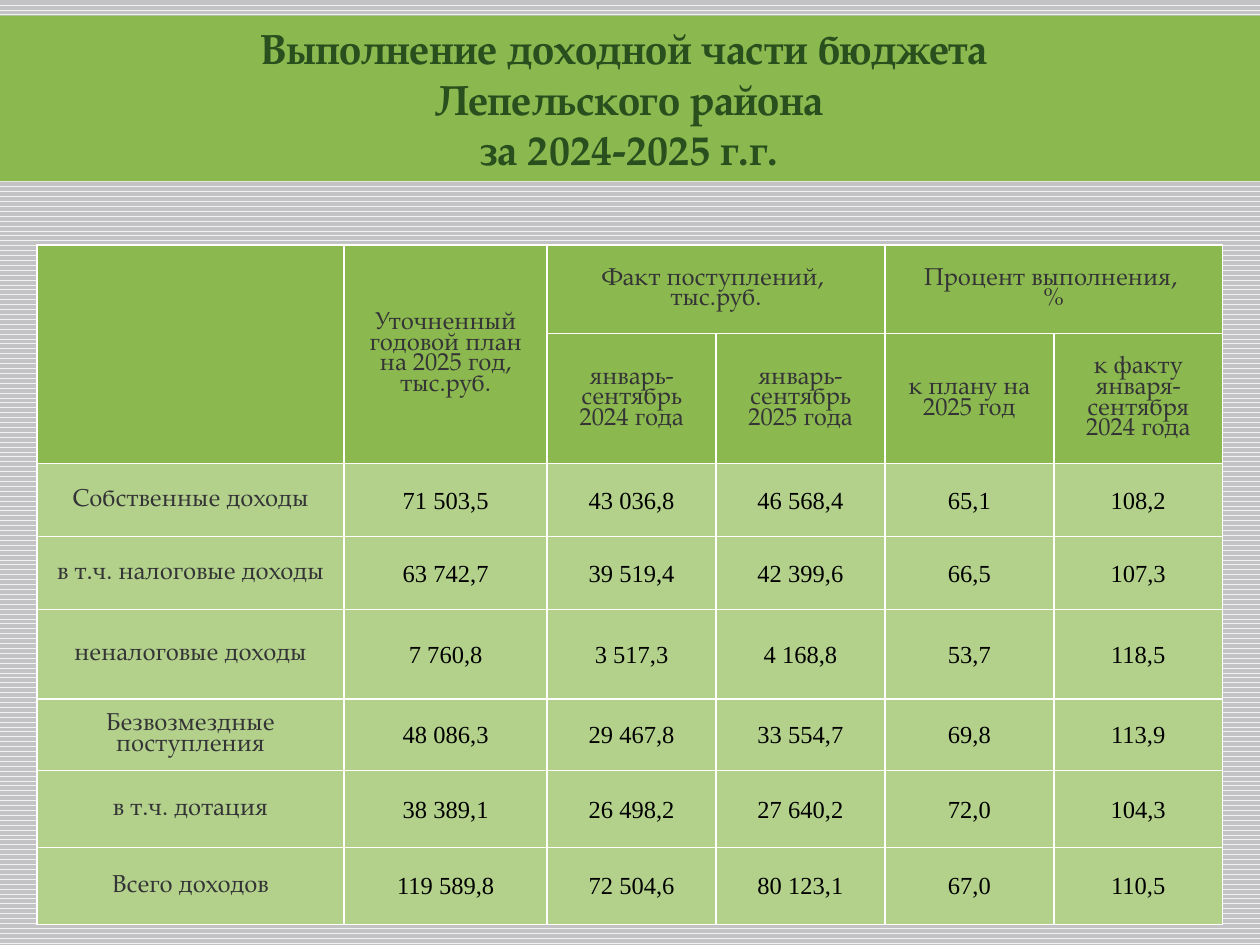
from lxml import etree
from pptx import Presentation
from pptx.dml.color import RGBColor
from pptx.enum import dml, shapes, text
from pptx.oxml import ns
from pptx.util import Pt

GREEN = RGBColor(0x8C, 0xB9, 0x4F)
PALE_GREEN = RGBColor(0xB3, 0xD1, 0x8B)
DARK_GREEN = RGBColor(0x28, 0x4F, 0x1D)
GRAPHITE = RGBColor(0x34, 0x34, 0x36)
BLACK = RGBColor(0, 0, 0)
WHITE = RGBColor(0xFF, 0xFF, 0xFF)
STRIPE = RGBColor(0xF2, 0xF2, 0xF2)
GRAY = RGBColor(0xC3, 0xC2, 0xC5)
SERIF, NUMERIC = "TeX Gyre Pagella", "Times New Roman"

TITLE = ["Выполнение доходной части бюджета ", "Лепельского района", "за 2024-2025 г.г."]
# (row, column, rows spanned, columns spanned, lines)
HEADERS = [
    (0, 0, 2, 1, []),
    (0, 1, 2, 1, ["Уточненный годовой план на 2025 год, тыс.руб."]),
    (0, 2, 1, 2, ["Факт поступлений, ", "тыс.руб."]),
    (0, 4, 1, 2, ["Процент выполнения, ", "%"]),
    (1, 2, 1, 1, ["январь-сентябрь 2024 года"]),
    (1, 3, 1, 1, ["январь-сентябрь 2025 года"]),
    (1, 4, 1, 1, ["к плану на 2025 год"]),
    (1, 5, 1, 1, ["к факту января-сентября 2024 года"]),
]
INCOME = [
    ("Собственные доходы", "71 503,5", "43 036,8", "46 568,4", "65,1", "108,2"),
    ("в т.ч. налоговые доходы", "63 742,7", "39 519,4", "42 399,6", "66,5", "107,3"),
    ("неналоговые доходы", "7 760,8", "3 517,3", "4 168,8", "53,7", "118,5"),
    ("Безвозмездные поступления", "48 086,3", "29 467,8", "33 554,7", "69,8", "113,9"),
    ("в т.ч. дотация", "38 389,1", "26 498,2", "27 640,2", "72,0", "104,3"),
    ("Всего доходов", "119 589,8", "72 504,6", "80 123,1", "67,0", "110,5"),
]
COLUMN_WIDTHS = [175.7, 116] + [96.5] * 4
ROW_HEIGHTS = [50.5, 74.5, 41.7, 41.7, 51, 41, 44, 44]
HEADER_ROWS = 2


def write(frame, lines, size=14, font=SERIF, color=GRAPHITE, bold=False, spacing=None):
    for i, line in enumerate(lines):
        paragraph = frame.paragraphs[0] if i == 0 else frame.add_paragraph()
        paragraph.alignment = text.PP_ALIGN.CENTER
        paragraph.line_spacing = spacing
        run = paragraph.add_run()
        run.text = line
        run.font.size, run.font.name, run.font.bold = Pt(size), font, bold
        run.font.color.rgb = color


def style_cell(cell, color):
    """Fill a cell, centre it vertically and give it white borders."""
    cell.fill.solid()
    cell.fill.fore_color.rgb = color
    cell.vertical_anchor = text.MSO_ANCHOR.MIDDLE
    properties = cell._tc.get_or_add_tcPr()
    for i, side in enumerate(("a:lnL", "a:lnR", "a:lnT", "a:lnB")):
        border = etree.Element(ns.qn(side), w=str(Pt(1)))
        fill = etree.SubElement(border, ns.qn("a:solidFill"))
        etree.SubElement(fill, ns.qn("a:srgbClr"), val=str(WHITE))
        properties.insert(i, border)


def add_title(slide):
    banner = slide.shapes.add_shape(
        shapes.MSO_SHAPE.RECTANGLE, Pt(-0.5), Pt(9), Pt(720.5), Pt(94.5))
    banner.shadow.inherit = False
    banner.fill.solid()
    banner.fill.fore_color.rgb = GREEN
    banner.line.fill.background()
    banner.text_frame.word_wrap = True
    banner.text_frame.auto_size = text.MSO_AUTO_SIZE.SHAPE_TO_FIT_TEXT
    write(banner.text_frame, TITLE, size=24, color=DARK_GREEN, bold=True)


def add_income_table(slide):
    table = slide.shapes.add_table(
        len(ROW_HEIGHTS), len(COLUMN_WIDTHS), Pt(21), Pt(140),
        Pt(sum(COLUMN_WIDTHS)), Pt(sum(ROW_HEIGHTS))).table
    for column, width in zip(table.columns, COLUMN_WIDTHS):
        column.width = Pt(width)
    for r, height in enumerate(ROW_HEIGHTS):
        table.rows[r].height = Pt(height)
        for c in range(len(COLUMN_WIDTHS)):
            style_cell(table.cell(r, c), GREEN if r < HEADER_ROWS else PALE_GREEN)

    for row, column, rows, columns, lines in HEADERS:
        cell = table.cell(row, column)
        if rows * columns > 1:
            cell.merge(table.cell(row + rows - 1, column + columns - 1))
        write(cell.text_frame, lines, spacing=0.83)

    for r, (label, *values) in enumerate(INCOME, HEADER_ROWS):
        write(table.cell(r, 0).text_frame, [label], spacing=0.83)
        for c, value in enumerate(values, 1):
            cell = table.cell(r, c)
            cell.margin_left = cell.margin_right = cell.margin_top = Pt(0.7)
            cell.margin_bottom = 0
            write(cell.text_frame, [value], font=NUMERIC, color=BLACK)


def main():
    deck = Presentation()
    deck.slide_width, deck.slide_height = Pt(720), Pt(540)
    slide = deck.slides.add_slide(deck.slide_layouts[6])
    backdrop = slide.background.fill
    backdrop.patterned()
    backdrop.pattern = dml.MSO_PATTERN.WAVE
    backdrop.fore_color.rgb = STRIPE
    backdrop.back_color.rgb = GRAY
    add_title(slide)
    add_income_table(slide)
    deck.save("out.pptx")


if __name__ == "__main__":
    main()
